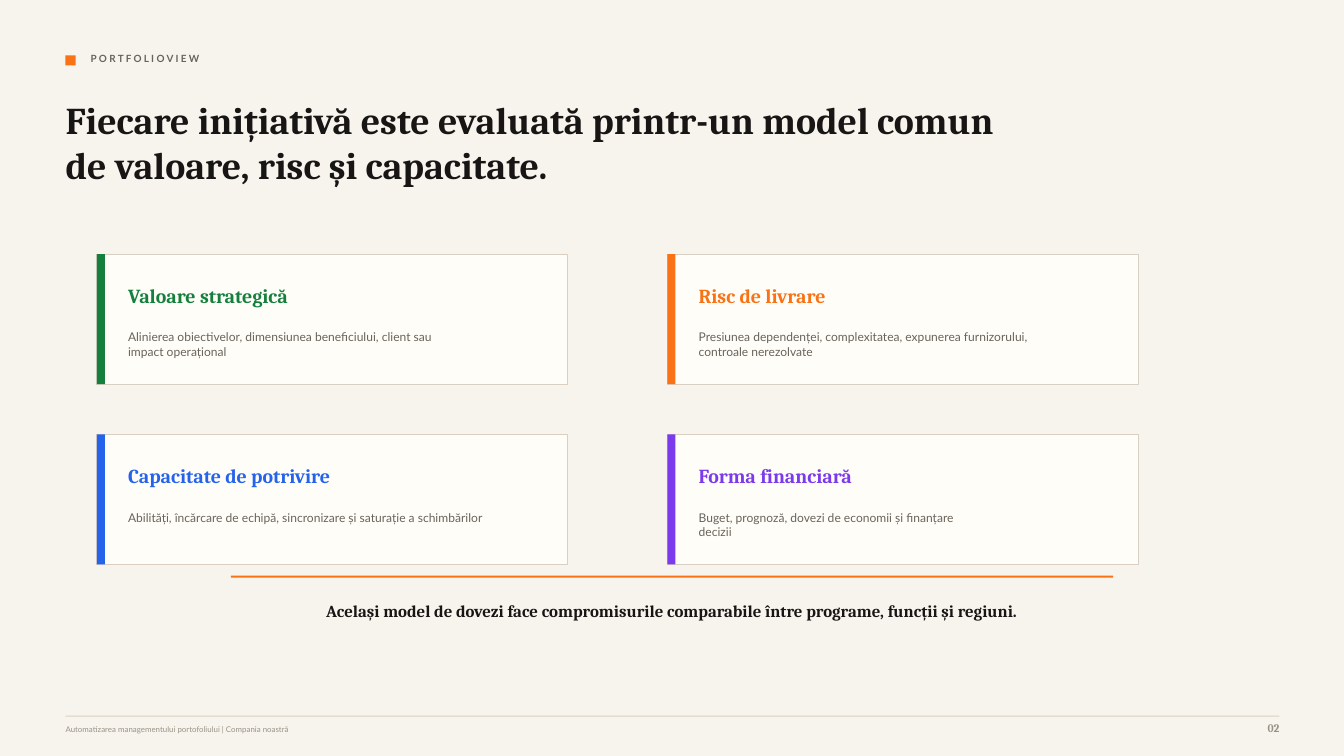
from pptx import Presentation
from pptx.dml.color import RGBColor
from pptx.enum.shapes import MSO_SHAPE
from pptx.enum.text import PP_ALIGN
from pptx.util import Inches, Pt

CREAM = RGBColor(0xF7, 0xF4, 0xEE)
PAPER = RGBColor(0xFF, 0xFD, 0xF8)
SAND = RGBColor(0xD9, 0xD0, 0xC3)
INK = RGBColor(0x17, 0x16, 0x14)
GRAY = RGBColor(0x69, 0x63, 0x5A)
MUTED = RGBColor(0x9A, 0x91, 0x84)
ORANGE = RGBColor(0xF9, 0x73, 0x16)
GREEN = RGBColor(0x15, 0x80, 0x3D)
BLUE = RGBColor(0x25, 0x63, 0xEB)
VIOLET = RGBColor(0x7C, 0x3A, 0xED)

deck = Presentation()
deck.slide_width = Inches(13.33)
deck.slide_height = Inches(7.5)
slide = deck.slides.add_slide(deck.slide_layouts[6])
slide.background.fill.solid()
slide.background.fill.fore_color.rgb = CREAM


def add_rect(x, y, w, h, fill, edge=None):
    rect = slide.shapes.add_shape(
        MSO_SHAPE.RECTANGLE, Inches(x), Inches(y), Inches(w), Inches(h))
    rect.shadow.inherit = False
    rect.fill.solid()
    rect.fill.fore_color.rgb = fill
    if edge is None:
        rect.line.fill.background()
    else:
        rect.line.color.rgb = edge
        rect.line.width = Pt(0.75)


def add_text(x, y, w, h, lines, size, font, color, bold=False, align=PP_ALIGN.LEFT):
    box = slide.shapes.add_textbox(Inches(x), Inches(y), Inches(w), Inches(h))
    frame = box.text_frame
    frame.word_wrap = True
    frame.margin_left = frame.margin_right = 0
    frame.margin_top = frame.margin_bottom = 0
    for i, line in enumerate(lines):
        para = frame.add_paragraph() if i else frame.paragraphs[0]
        para.alignment = align
        run = para.add_run()
        run.text = line
        run.font.size = Pt(size)
        run.font.name = font
        run.font.bold = bold
        run.font.color.rgb = color


add_rect(0.65, 0.55, 0.1, 0.1, ORANGE)
add_text(0.9, 0.52, 5.83, 0.19, ["P O R T F O L I O V I E W"], 7.1, "Lato", GRAY, True)
add_text(0.65, 0.96, 9.38, 1.08,
         ["Fiecare inițiativă este evaluată printr-un model comun de valoare, risc și capacitate."],
         27, "Cambria", INK, True)

cards = [
    ("Valoare strategică", GREEN,
     ["Alinierea obiectivelor, dimensiunea beneficiului, client sau", "impact operațional"]),
    ("Risc de livrare", ORANGE,
     ["Presiunea dependenței, complexitatea, expunerea furnizorului,", "controale nerezolvate"]),
    ("Capacitate de potrivire", BLUE,
     ["Abilități, încărcare de echipă, sincronizare și saturație a schimbărilor"]),
    ("Forma financiară", VIOLET,
     ["Buget, prognoză, dovezi de economii și finanțare", "decizii"]),
]
for i, (head, color, lines) in enumerate(cards):
    row, col = divmod(i, 2)
    x = 0.96 + col * 5.66
    y = 2.52 + row * 1.79
    add_rect(x, y, 4.67, 1.29, PAPER, SAND)
    add_rect(x, y, 0.08, 1.29, color)
    add_text(x + 0.31, y + 0.29, 2.29, 0.25, [head], 14.2, "Cambria", color, True)
    add_text(x + 0.31, y + 0.75, 3.54, 0.35, lines, 8.6, "Lato", GRAY)

add_rect(2.29, 5.71, 8.75, 0.02, ORANGE)
add_text(2.5, 5.96, 8.33, 0.25,
         ["Același model de dovezi face compromisurile comparabile între programe, funcții și regiuni."],
         12, "Cambria", INK, True, PP_ALIGN.CENTER)

add_rect(0.65, 7.1, 12.04, 0.01, SAND)
add_text(0.65, 7.19, 7.92, 0.15,
         ["Automatizarea managementului portofoliului | Compania noastră"], 5.6, "Lato", MUTED)
add_text(12.19, 7.15, 0.5, 0.19, ["02"], 8.2, "Cambria", MUTED, True, PP_ALIGN.RIGHT)

deck.save("out.pptx")
